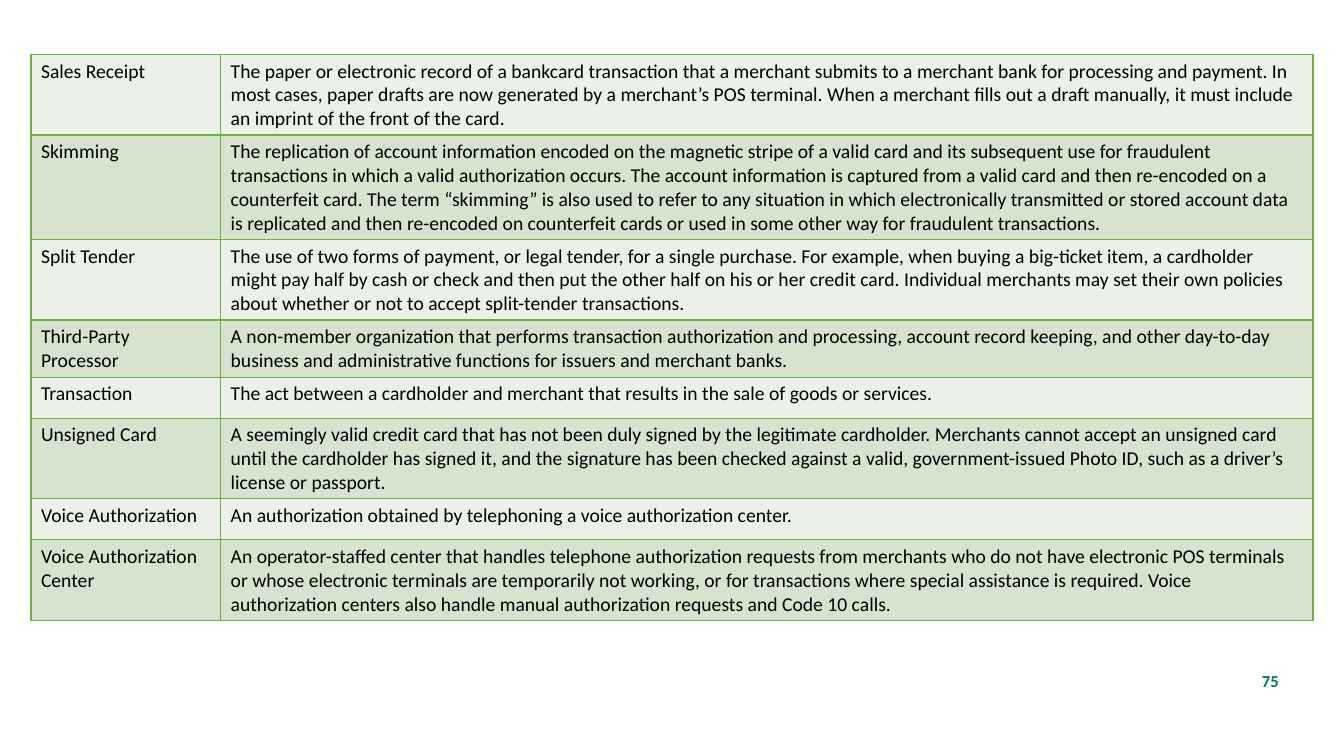
from lxml.etree import SubElement
from pptx import Presentation
from pptx.dml.color import RGBColor
from pptx.enum.text import MSO_ANCHOR, PP_ALIGN
from pptx.oxml.ns import qn
from pptx.util import Cm, Pt

GLOSSARY = [
    ("Sales Receipt",
     "The paper or electronic record of a bankcard transaction that a merchant submits to a "
     "merchant bank for processing and payment. In most cases, paper drafts are now generated "
     "by a merchant’s POS terminal. When a merchant fills out a draft manually, it must include "
     "an imprint of the front of the card."),
    ("Skimming",
     "The replication of account information encoded on the magnetic stripe of a valid card and "
     "its subsequent use for fraudulent transactions in which a valid authorization occurs. The "
     "account information is captured from a valid card and then re-encoded on a counterfeit "
     "card. The term “skimming” is also used to refer to any situation in which electronically "
     "transmitted or stored account data is replicated and then re-encoded on counterfeit cards "
     "or used in some other way for fraudulent transactions."),
    ("Split Tender",
     "The use of two forms of payment, or legal tender, for a single purchase. For example, when "
     "buying a big-ticket item, a cardholder might pay half by cash or check and then put the "
     "other half on his or her credit card. Individual merchants may set their own policies "
     "about whether or not to accept split-tender transactions."),
    ("Third-Party Processor",
     "A non-member organization that performs transaction authorization and processing, account "
     "record keeping, and other day-to-day business and administrative functions for issuers "
     "and merchant banks."),
    ("Transaction",
     "The act between a cardholder and merchant that results in the sale of goods or services."),
    ("Unsigned Card",
     "A seemingly valid credit card that has not been duly signed by the legitimate cardholder. "
     "Merchants cannot accept an unsigned card until the cardholder has signed it, and the "
     "signature has been checked against a valid, government-issued Photo ID, such as a "
     "driver’s license or passport."),
    ("Voice Authorization",
     "An authorization obtained by telephoning a voice authorization center."),
    ("Voice Authorization Center",
     "An operator-staffed center that handles telephone authorization requests from merchants "
     "who do not have electronic POS terminals or whose electronic terminals are temporarily "
     "not working, or for transactions where special assistance is required. Voice "
     "authorization centers also handle manual authorization requests and Code 10 calls."),
]


def color(value):
    return RGBColor.from_string(value)


class GlossarySlide:
    """Holds the style and the current slide, and draws each kind of element."""

    font_name = "Calibri"
    text_color = "000000"
    accent = "007851"
    border = "70AD47"
    bands = ("EBF1E9", "D5E3CF")

    def __init__(self, presentation):
        self.slide = presentation.slides.add_slide(presentation.slide_layouts[6])

    def set_text(self, paragraph, text, size, text_color, bold=False):
        paragraph.text = text
        font = paragraph.font
        font.name, font.size, font.bold = self.font_name, Pt(size), bold
        font.color.rgb = color(text_color)

    def page_number(self, text, left, top, width, height):
        shape = self.slide.shapes.add_textbox(Cm(left), Cm(top), Cm(width), Cm(height))
        frame = shape.text_frame
        frame.word_wrap = True
        frame.vertical_anchor = MSO_ANCHOR.MIDDLE
        paragraph = frame.paragraphs[0]
        paragraph.alignment = PP_ALIGN.RIGHT
        self.set_text(paragraph, text, 12, self.accent, bold=True)

    def outline(self, cell):
        properties = cell._tc.get_or_add_tcPr()
        for side in ("lnL", "lnR", "lnT", "lnB"):
            line = SubElement(properties, qn(f"a:{side}"), w=str(Pt(1)))
            fill = SubElement(line, qn("a:solidFill"))
            SubElement(fill, qn("a:srgbClr"), val=self.border)

    def table(self, entries, left, top, column_widths, row_height):
        shape = self.slide.shapes.add_table(
            len(entries), len(column_widths), Cm(left), Cm(top),
            Cm(sum(column_widths)), Cm(row_height * len(entries)))
        table = shape.table
        table.first_row = table.horz_banding = False
        for column, width in zip(table.columns, column_widths):
            column.width = Cm(width)
        for index, (row, entry) in enumerate(zip(table.rows, entries)):
            row.height = Cm(row_height)
            for cell, text in zip(row.cells, entry):
                self.outline(cell)
                cell.fill.solid()
                cell.fill.fore_color.rgb = color(self.bands[index % 2])
                self.set_text(cell.text_frame.paragraphs[0], text, 14, self.text_color)


def main():
    presentation = Presentation()
    presentation.slide_width, presentation.slide_height = Cm(33.87), Cm(19.05)
    glossary = GlossarySlide(presentation)
    glossary.page_number("75", 30.12, 16.79, 2.36, 0.74)
    glossary.table(GLOSSARY, 0.78, 1.37, (4.78, 27.53), 1.03)
    presentation.save("out.pptx")


if __name__ == "__main__":
    main()
